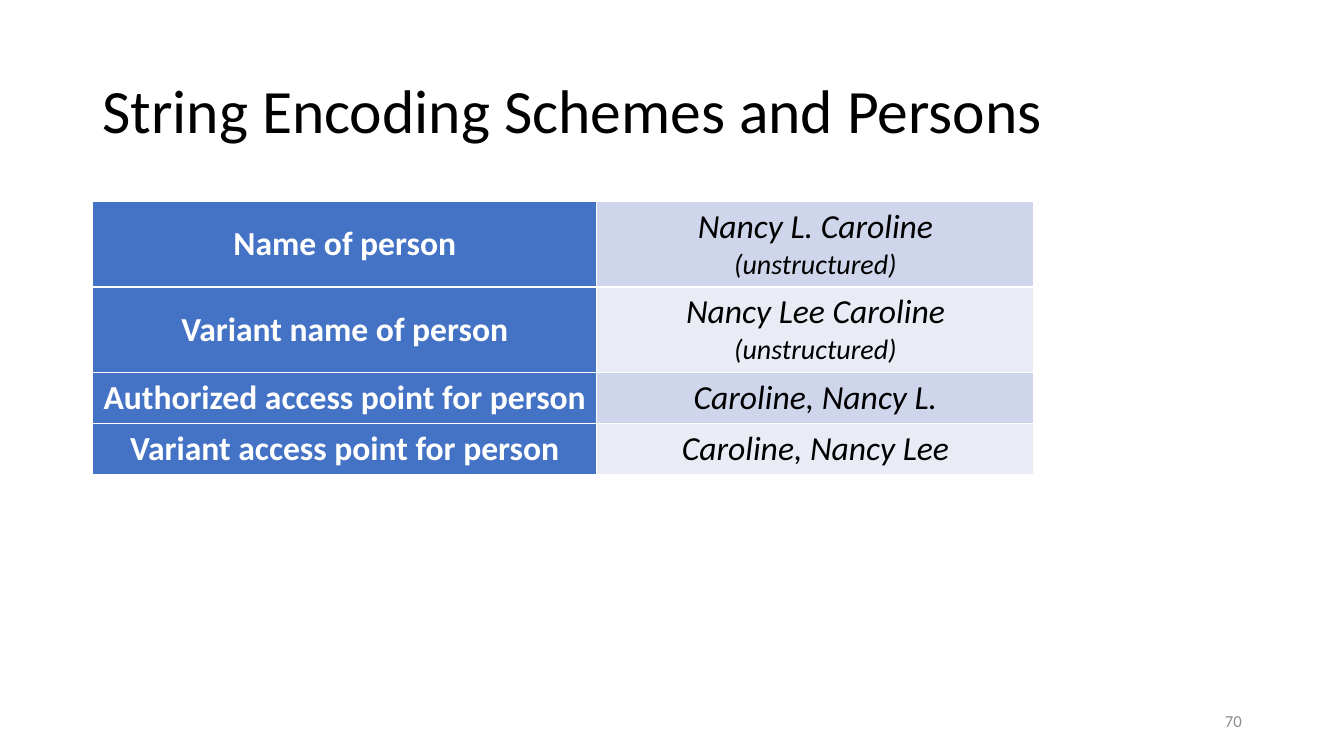
from dataclasses import dataclass

from lxml.etree import SubElement
from pptx import Presentation
from pptx.dml.color import RGBColor
from pptx.enum.text import MSO_ANCHOR as Anchor, PP_ALIGN as Align
from pptx.oxml.ns import qn
from pptx.slide import Slide
from pptx.table import _Cell as Cell
from pptx.text.text import TextFrame
from pptx.util import Cm, Pt


@dataclass(frozen=True)
class Theme:
    font: str = "Calibri"
    black: str = "000000"
    white: str = "FFFFFF"
    grey: str = "8C8C8C"
    label_fill: str = "4472C4"
    bands: tuple[str, str] = ("CFD5EA", "E9EBF5")
    title_size: int = 44
    cell_size: int = 24
    note_size: int = 20
    number_size: int = 12


@dataclass(frozen=True)
class Line:
    text: str
    size: int
    color: str
    bold: bool = False
    italic: bool = False
    align: Align = Align.CENTER
    spacing: float = 1.0


@dataclass(frozen=True)
class Box:
    left: float
    top: float
    width: float
    height: float
    line: Line


@dataclass(frozen=True)
class Element:
    label: str
    value: str
    note: str = ""


THEME = Theme()
COLUMN_WIDTHS = (12.7, 11.02)
ROW_HEIGHT = 1.29
NOTED_ROW_HEIGHT = 2.15

BOXES = (
    Box(2.33, 1.01, 29.21, 3.68,
        Line("String Encoding Schemes and Persons", THEME.title_size,
             THEME.black, align=Align.LEFT, spacing=0.9)),
    Box(23.93, 17.65, 7.62, 1.01,
        Line("70", THEME.number_size, THEME.grey, align=Align.RIGHT)),
)

ELEMENTS = (
    Element("Name of person", "Nancy L. Caroline", "(unstructured)"),
    Element("Variant name of person", "Nancy Lee Caroline", "(unstructured)"),
    Element("Authorized access point for person", "Caroline, Nancy L."),
    Element("Variant access point for person", "Caroline, Nancy Lee"),
)


def write_lines(tf: TextFrame, lines: list[Line]) -> None:
    for i, line in enumerate(lines):
        p = tf.add_paragraph() if i else tf.paragraphs[0]
        p.alignment = line.align
        p.line_spacing = line.spacing
        r = p.add_run()
        r.text = line.text
        formats = {"name": THEME.font, "size": Pt(line.size),
                   "bold": line.bold, "italic": line.italic}
        for name, value in formats.items():
            setattr(r.font, name, value)
        r.font.color.rgb = RGBColor.from_string(line.color)


def add_box(s: Slide, box: Box) -> None:
    sp = s.shapes.add_textbox(Cm(box.left), Cm(box.top),
                              Cm(box.width), Cm(box.height))
    tf = sp.text_frame
    for name, value in {"word_wrap": True, "vertical_anchor": Anchor.MIDDLE}.items():
        setattr(tf, name, value)
    write_lines(tf, [box.line])


def fill_cell(cell: Cell, color: str, lines: list[Line]) -> None:
    tc_pr = cell._tc.get_or_add_tcPr()
    for side in ("lnL", "lnR", "lnT", "lnB"):
        border = SubElement(tc_pr, qn(f"a:{side}"), w=str(Pt(1)))
        solid = SubElement(border, qn("a:solidFill"))
        SubElement(solid, qn("a:srgbClr"), val=THEME.white)
    cell.fill.solid()
    cell.fill.fore_color.rgb = RGBColor.from_string(color)
    cell.vertical_anchor = Anchor.MIDDLE
    write_lines(cell.text_frame, lines)


def add_element_table(s: Slide) -> None:
    heights = [NOTED_ROW_HEIGHT if e.note else ROW_HEIGHT for e in ELEMENTS]
    table = s.shapes.add_table(len(ELEMENTS), len(COLUMN_WIDTHS),
                               Cm(2.34), Cm(5.08),
                               Cm(sum(COLUMN_WIDTHS)), Cm(sum(heights))).table
    for name, value in {"first_row": False, "first_col": True}.items():
        setattr(table, name, value)
    for column, width in zip(table.columns, COLUMN_WIDTHS):
        column.width = Cm(width)
    for i, (element, height) in enumerate(zip(ELEMENTS, heights)):
        table.rows[i].height = Cm(height)
        label = Line(element.label, THEME.cell_size, THEME.white, bold=True)
        values = [Line(element.value, THEME.cell_size, THEME.black, italic=True)]
        if element.note:
            values.append(Line(element.note, THEME.note_size, THEME.black, italic=True))
        fill_cell(table.cell(i, 0), THEME.label_fill, [label])
        fill_cell(table.cell(i, 1), THEME.bands[i % 2], values)


def main() -> None:
    prs = Presentation()
    prs.slide_width, prs.slide_height = Cm(33.87), Cm(19.05)
    s = prs.slides.add_slide(prs.slide_layouts[6])
    add_element_table(s)
    for box in BOXES:
        add_box(s, box)
    prs.save("out.pptx")


if __name__ == "__main__":
    main()
